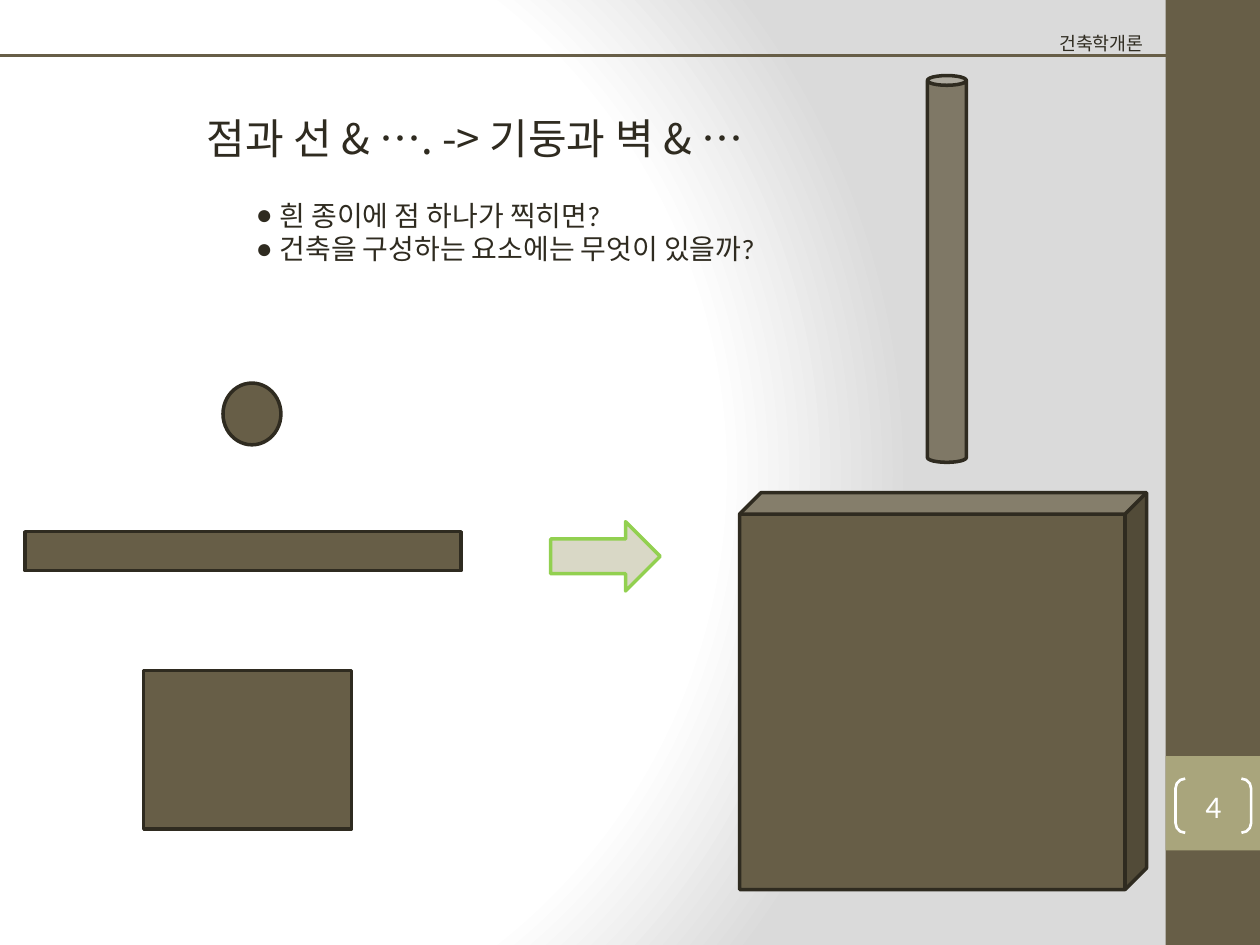
"""Build a slide that relates points, lines and planes to columns and walls."""
import pptx
import pptx.util
import pptx.dml.color
import pptx.enum.shapes
import pptx.enum.text
import pptx.oxml
import pptx.oxml.ns

SHAPE = pptx.enum.shapes.MSO_SHAPE
ALIGN = pptx.enum.text.PP_ALIGN
ANCHOR = pptx.enum.text.MSO_ANCHOR
AUTO_SIZE = pptx.enum.text.MSO_AUTO_SIZE
NAMESPACE = pptx.oxml.ns.nsdecls("a")

WIDTH, HEIGHT = 10, 7.5
BAR_WIDTH = 0.75
BAR_LEFT = WIDTH - BAR_WIDTH
RULE_TOP = 0.44
COLORS = {"brown": "675E47", "olive": "A9A57C", "dark": "2F2B20", "white": "FFFFFF", "green": "92D050"}
KOREAN_FONT, LATIN_FONT = "Noto Sans CJK KR", "Calibri"

TITLE = "점과 선 & …. -> 기둥과 벽 & …"
QUESTIONS = ["흰 종이에 점 하나가 찍히면?", "건축을 구성하는 요소에는 무엇이 있을까?"]
COURSE = "건축학개론"
PAGE_NUMBER = "4"

SIDE_BAR = [
    {"kind": SHAPE.RECTANGLE, "box": (BAR_LEFT, 0, BAR_WIDTH, HEIGHT), "fill": "brown"},
    {"kind": SHAPE.RECTANGLE, "box": (BAR_LEFT, 6, BAR_WIDTH, BAR_WIDTH), "fill": "olive"},
]
ELEMENTS = [
    {"kind": SHAPE.OVAL, "box": (1.77, 3.04, 0.46, 0.49)},
    {"kind": SHAPE.RECTANGLE, "box": (0.2, 4.22, 3.46, 0.31)},
    {"kind": SHAPE.RECTANGLE, "box": (1.14, 5.32, 1.65, 1.26)},
    {"kind": SHAPE.CAN, "box": (7.36, 0.6, 0.31, 3.07), "opacity": 79},
    {"kind": SHAPE.CUBE, "box": (5.87, 3.91, 3.23, 3.15), "adjustment": 0.054},
    {"kind": SHAPE.RIGHT_ARROW, "box": (4.37, 4.14, 0.87, 0.55), "fill": "olive", "line": "green", "opacity": 43},
]
ELEMENT_STYLE = {"fill": "brown", "line": "dark"}
PAGE_BRACKETS = {"kind": SHAPE.DOUBLE_BRACKET, "box": (9.33, 6.18, 0.6, 0.43),
                 "line": "white", "line_width": 1.5, "adjustment": 0.179}

BACKGROUND = f"""<a:gradFill {NAMESPACE} rotWithShape="1"><a:gsLst>
<a:gs pos="0"><a:srgbClr val="FFFFFF"/></a:gs>
<a:gs pos="75000"><a:srgbClr val="FFFFFF"/></a:gs>
<a:gs pos="100000"><a:srgbClr val="DADADA"/></a:gs></a:gsLst>
<a:path path="circle"><a:fillToRect l="20000" t="50000" r="100000" b="50000"/></a:path></a:gradFill>"""


def rgb(name):
    return pptx.dml.color.RGBColor.from_string(COLORS[name])


def inches(values):
    return [pptx.util.Inches(value) for value in values]


def apply(target, values):
    for name, value in values.items():
        setattr(target, name, value)


def place(shape, box):
    apply(shape, dict(zip(("left", "top", "width", "height"), inches(box))))


def add_element(slide, kind, box, fill=None, line=None, line_width=2, opacity=None, adjustment=None):
    shape = slide.shapes.add_shape(kind, *inches(box))
    shape.shadow.inherit = False
    if adjustment is not None:
        shape.adjustments[0] = adjustment
    if fill:
        shape.fill.solid()
        shape.fill.fore_color.rgb = rgb(fill)
    else:
        shape.fill.background()
    if opacity is not None:
        color = shape.fill._xPr.find(".//" + pptx.oxml.ns.qn("a:srgbClr"))
        color.append(pptx.oxml.parse_xml(f'<a:alpha {NAMESPACE} val="{opacity * 1000}"/>'))
    if line:
        shape.line.color.rgb = rgb(line)
        shape.line.width = pptx.util.Pt(line_width)
    else:
        shape.line.fill.background()
    return shape


def write(shape, lines, size, font=LATIN_FONT, color="dark", align=ALIGN.LEFT, bullet=None, spacing=(), frame=None):
    text_frame = shape.text_frame
    text_frame.text = "\n".join(lines)
    apply(text_frame, {"word_wrap": True, "vertical_anchor": ANCHOR.TOP, **(frame or {})})
    for index, paragraph in enumerate(text_frame.paragraphs):
        line_spacing = spacing[index] if index < len(spacing) else 1.0
        apply(paragraph, {"alignment": align, "space_before": pptx.util.Pt(0), "line_spacing": line_spacing})
        if bullet:
            indent = pptx.util.Inches(0.19)
            properties = paragraph._p.get_or_add_pPr()
            properties.set("marL", str(indent))
            properties.set("indent", str(-indent))
            properties.append(pptx.oxml.parse_xml(f'<a:buChar {NAMESPACE} char="{bullet}"/>'))
        for run in paragraph.runs:
            apply(run.font, {"name": font, "size": pptx.util.Pt(size)})
            run.font.color.rgb = rgb(color)
            run.font._element.append(pptx.oxml.parse_xml(f'<a:ea {NAMESPACE} typeface="{KOREAN_FONT}"/>'))


def set_background(slide):
    slide.background.fill.solid()
    solid = slide.background._cSld.find(".//" + pptx.oxml.ns.qn("a:solidFill"))
    solid.getparent().replace(solid, pptx.oxml.parse_xml(BACKGROUND))


def add_header_rule(slide):
    rule = slide.shapes.add_connector(
        pptx.enum.shapes.MSO_CONNECTOR.STRAIGHT, *inches((0, RULE_TOP, BAR_LEFT, RULE_TOP)))
    rule.line.color.rgb = rgb("brown")
    rule.line.width = pptx.util.Pt(2)
    rule._element.spPr.append(pptx.oxml.parse_xml(f"<a:effectLst {NAMESPACE}/>"))


def main():
    presentation = pptx.Presentation()
    apply(presentation, dict(zip(("slide_width", "slide_height"), inches((WIDTH, HEIGHT)))))
    slide = presentation.slides.add_slide(presentation.slide_layouts[1])
    set_background(slide)

    for part in SIDE_BAR:
        add_element(slide, **part)
    for element in ELEMENTS:
        add_element(slide, **{**ELEMENT_STYLE, **element})
    add_header_rule(slide)

    brackets = add_element(slide, **PAGE_BRACKETS)
    margins = dict.fromkeys(("margin_left", "margin_top", "margin_right", "margin_bottom"), 0)
    write(brackets, [PAGE_NUMBER], 18, color="white", align=ALIGN.CENTER,
          frame={"vertical_anchor": ANCHOR.MIDDLE, **margins})

    grow = {"auto_size": AUTO_SIZE.SHAPE_TO_FIT_TEXT}
    title, questions = slide.shapes.title, slide.placeholders[1]
    place(title, (1.54, 0.84, 6.38, 0.5))
    write(title, [TITLE], 24, font=KOREAN_FONT, frame=grow)
    place(questions, (1.93, 1.39, 4.41, 0.77))
    write(questions, QUESTIONS, 16, bullet="●", spacing=(1.5, 1.0), frame=grow)
    course = slide.shapes.add_textbox(*inches((8.31, 0.21, 1.1, 0.28)))
    write(course, [COURSE], 10.5, frame=grow)

    presentation.save("out.pptx")


if __name__ == "__main__":
    main()
